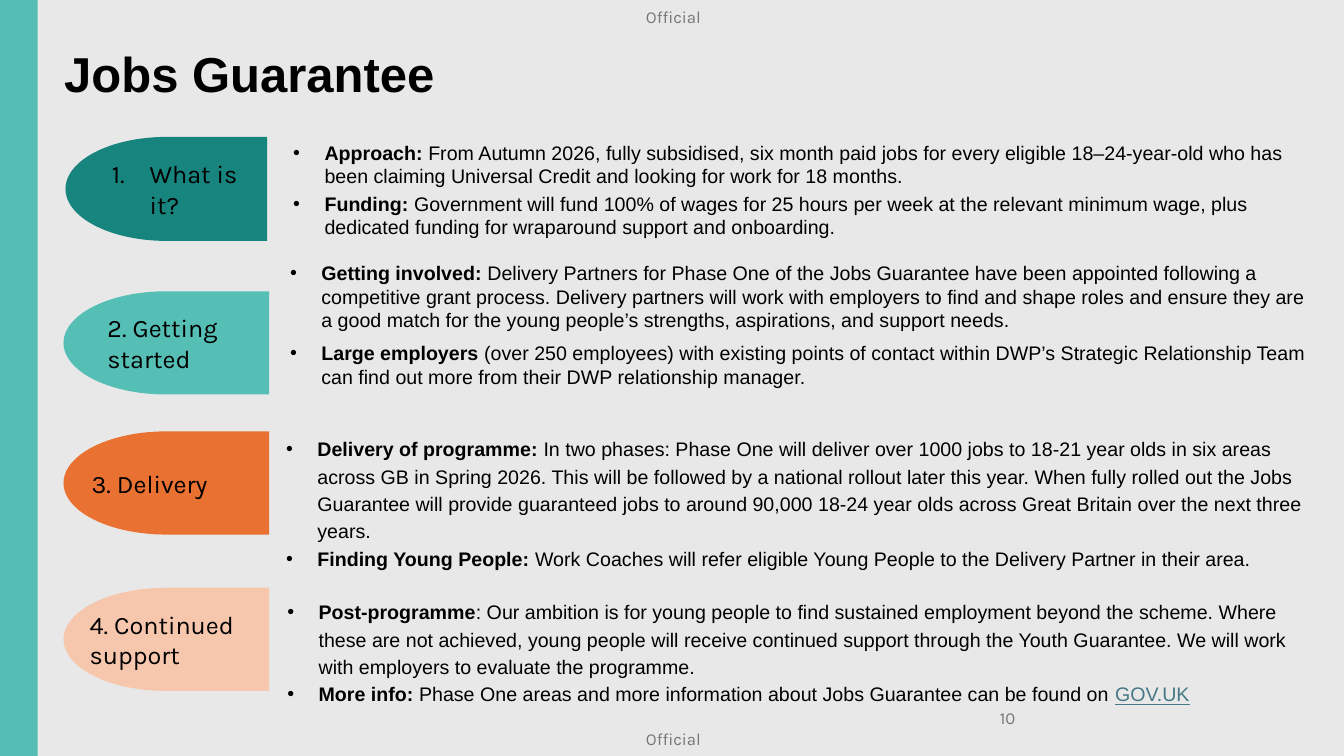
from dataclasses import dataclass

from lxml.etree import SubElement
from pptx import Presentation
from pptx.dml.color import RGBColor as RGB
from pptx.enum.shapes import MSO_SHAPE as SHAPE
from pptx.enum.text import MSO_ANCHOR as ANCHOR
from pptx.oxml.ns import qn
from pptx.util import Cm, Pt


@dataclass(frozen=True)
class Theme:
    background: str = "E8E8E8"
    band: str = "56BDB4"
    text: str = "000000"
    muted: str = "757575"
    link: str = "467886"
    heading_font: str = "Arial"
    label_font: str = "Karla"
    title: int = 35
    label: int = 18
    body: int = 14
    small: int = 12


THEME = Theme()
TITLE = "Jobs Guarantee"
MARKING = "Official"
PAGE_NUMBER = "10"

# Boxes are (left, top, width, height) in cm; bullets are (lead, rest, link).
SECTIONS = [
    dict(label="What is it?", numbered=True, color="18847E",
         tab=(1.65, 3.45, 5.08, 2.62), label_x=(2.57, 4.09),
         box=(7.14, 3.42, 26.14, 3), gap=2.8, leading=None,
         bullets=[
             ("Approach: ", "From Autumn 2026, fully subsidised, six month paid jobs for "
              "every eligible 18–24-year-old who has been claiming Universal Credit and "
              "looking for work for 18 months.", ""),
             ("Funding: ", "Government will fund 100% of wages for 25 hours per week at the "
              "relevant minimum wage, plus dedicated funding for wraparound support and "
              "onboarding.", "")]),
    dict(label="2. Getting started", numbered=False, color="55BEB5",
         tab=(1.6, 7.34, 5.18, 2.6), label_x=(2.46, 4.09),
         box=(7.06, 6.45, 26.19, 3.56), gap=7, leading=None,
         bullets=[
             ("Getting involved: ", "Delivery Partners for Phase One of the Jobs Guarantee "
              "have been appointed following a competitive grant process. Delivery partners "
              "will work with employers to find and shape roles and ensure they are a good "
              "match for the young people’s strengths, aspirations, and support needs.", ""),
             ("Large employers", " (over 250 employees) with existing points of contact "
              "within DWP’s Strategic Relationship Team can find out more from their DWP "
              "relationship manager.", "")]),
    dict(label="3. Delivery", numbered=False, color="E97132",
         tab=(1.6, 10.87, 5.18, 2.6), label_x=(2.06, 5.08),
         box=(6.96, 10.8, 26.31, 3.76), gap=0, leading=19.5,
         bullets=[
             ("Delivery of programme: ", "In two phases: Phase One will deliver over 1000 "
              "jobs to 18-21 year olds in six areas across GB in Spring 2026. This will be "
              "followed by a national rollout later this year. When fully rolled out the "
              "Jobs Guarantee will provide guaranteed jobs to around 90,000 18-24 year olds "
              "across Great Britain over the next three years.", ""),
             ("Finding Young People: ", "Work Coaches will refer eligible Young People to "
              "the Delivery Partner in their area.", "")]),
    dict(label="4. Continued support", numbered=False, color="F6C6AD",
         tab=(1.6, 14.81, 5.18, 2.6), label_x=(2.01, 5.08),
         box=(6.99, 14.91, 25.81, 3.07), gap=0, leading=19.5,
         bullets=[
             ("Post-programme", ": Our ambition is for young people to find sustained "
              "employment beyond the scheme. Where these are not achieved, young people will "
              "receive continued support through the Youth Guarantee. We will work with "
              "employers to evaluate the programme.", ""),
             ("More info: ", "Phase One areas and more information about Jobs Guarantee can "
              "be found on ", "GOV.UK")]),
]


def add_shape(slide, kind, box, color, rotation=0):
    s = slide.shapes.add_shape(kind, *map(Cm, box))
    s.fill.solid()
    s.fill.fore_color.rgb = RGB.from_string(color)
    s.line.fill.background()
    s.shadow.inherit = False
    s.rotation = rotation


def style(font, name, size, color=THEME.text, bold=False):
    font.name, font.size, font.bold = name, Pt(size), bold
    font.color.rgb = RGB.from_string(color)


def add_frame(slide, box):
    tf = slide.shapes.add_textbox(*map(Cm, box)).text_frame
    tf.word_wrap = True
    return tf


def add_line(slide, box, text, font, size, color=THEME.text, bold=False):
    tf = add_frame(slide, box)
    tf.text = text
    style(tf.paragraphs[0].runs[0].font, font, size, color, bold)
    return tf


def hang(p, indent, tag, **attributes):
    """Give a paragraph a hanging indent and a bullet or number."""
    pPr = p._p.get_or_add_pPr()
    pPr.set("marL", str(Cm(indent)))
    pPr.set("indent", str(-Cm(indent)))
    if tag == "a:buChar":
        SubElement(pPr, qn("a:buFont"), typeface="Arial")
    SubElement(pPr, qn(tag), **attributes)


def add_bullets(slide, section):
    tf = add_frame(slide, section["box"])
    for i, parts in enumerate(section["bullets"]):
        p = tf.add_paragraph() if i else tf.paragraphs[0]
        hang(p, 0.79, "a:buChar", char="•")
        if section["leading"]:
            p.line_spacing = Pt(section["leading"])
        if i:
            p.space_before = Pt(section["gap"])
        for role, text in zip(("lead", "rest", "link"), parts):
            if text:
                r = p.add_run()
                r.text = text
                color = THEME.link if role == "link" else THEME.text
                style(r.font, THEME.heading_font, THEME.body, color, role == "lead")
                r.font.underline = role == "link"


def add_section(slide, section):
    _, top, _, height = section["tab"]
    left, width = section["label_x"]
    add_shape(slide, SHAPE.FLOWCHART_DELAY, section["tab"], section["color"], 180)
    tf = add_line(slide, (left, top, width, height), section["label"],
                  THEME.label_font, THEME.label)
    tf.vertical_anchor = ANCHOR.MIDDLE
    if section["numbered"]:
        hang(tf.paragraphs[0], 0.95, "a:buAutoNum", type="arabicPeriod")
    add_bullets(slide, section)


def main():
    prs = Presentation()
    prs.slide_width, prs.slide_height = Cm(33.87), Cm(19.05)
    slide = prs.slides.add_slide(prs.slide_layouts[6])
    slide.background.fill.solid()
    slide.background.fill.fore_color.rgb = RGB.from_string(THEME.background)

    add_shape(slide, SHAPE.RECTANGLE, (0, 0, 0.95, 19.05), THEME.band)
    add_line(slide, (1.37, 0.97, 31.93, 1.8), TITLE,
             THEME.heading_font, THEME.title, bold=True)
    small_lines = [(MARKING, (16.28, 0.18, 2, 0.5)),
                   (MARKING, (16.28, 18.36, 2, 0.5)),
                   (PAGE_NUMBER, (25.2, 17.85, 1.5, 0.5))]
    for text, box in small_lines:
        tf = add_line(slide, box, text, THEME.label_font, THEME.small, THEME.muted)
        tf.margin_left = tf.margin_right = tf.margin_top = tf.margin_bottom = 0
        tf.vertical_anchor = ANCHOR.MIDDLE
    for section in SECTIONS:
        add_section(slide, section)
    prs.save("out.pptx")


if __name__ == "__main__":
    main()
